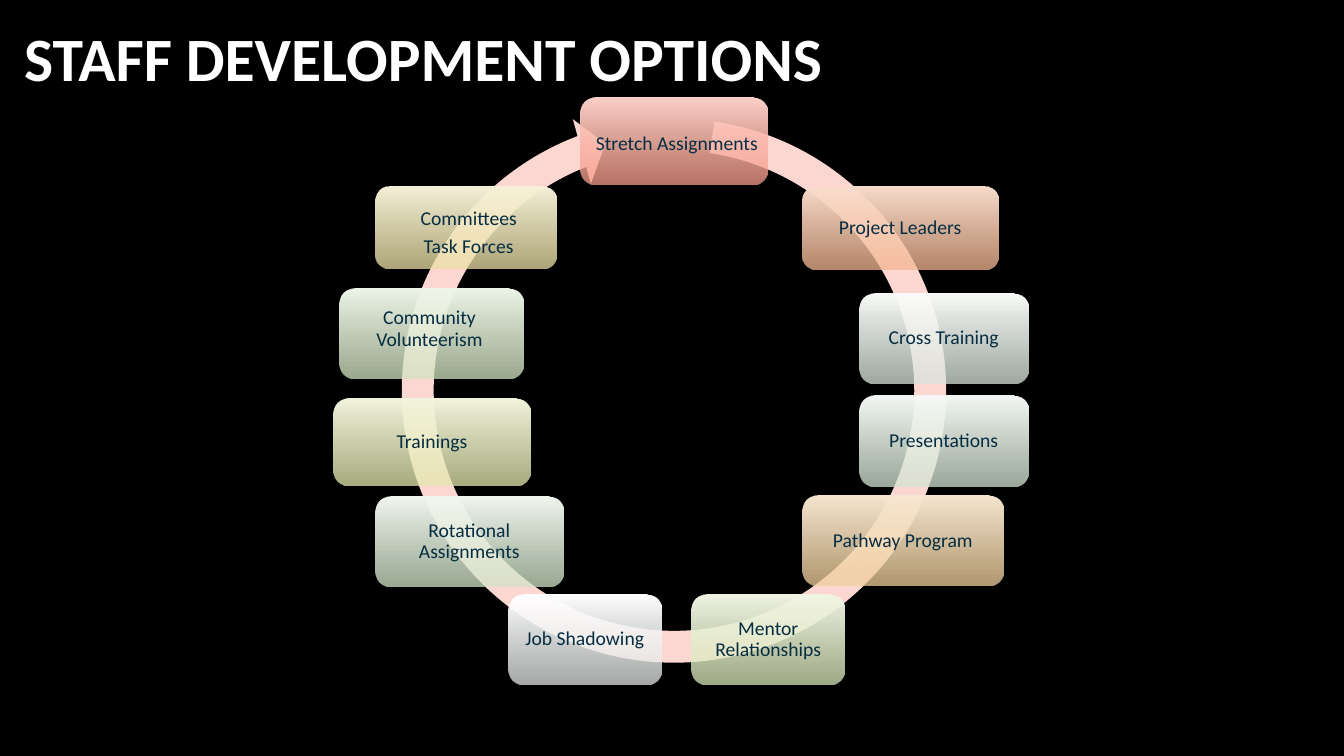
"""Build the slide of staff development options around a circular arrow."""
from dataclasses import dataclass

import lxml.etree
import pptx
import pptx.dml.color
import pptx.enum.shapes
import pptx.enum.text
import pptx.oxml.ns
import pptx.shapes.autoshape
import pptx.shapes.shapetree
import pptx.text.text
import pptx.util

PX = 9144
FONT = "Calibri"
INSET = 4
ALPHA = "74000"
BENDS = (0.055, 3.307, 149.358, 167.131, 0.058)
COLORS = {
    "back": "000000",
    "title": "FFFFFF",
    "ring": "FCD6D1",
    "text": "062D41",
}
FADES = {
    "rose": ("FCD1C9", "F89C8A"),
    "peach": ("F9DDCD", "F4B792"),
    "amber": ("F7E8D2", "EFCE9B"),
    "sand": ("F6F1D8", "EBE0A5"),
    "lime": ("F3F5DE", "E4E8AE"),
    "leaf": ("F0F5E4", "D8E6B7"),
    "moss": ("EFF6EA", "D2E4C1"),
    "sage": ("F2F7F0", "D1E4C9"),
    "mint": ("F5F9F5", "D3E4D2"),
    "mist": ("FAFCFA", "D9E4DB"),
    "snow": ("FFFFFF", "E1E5E3"),
}


@dataclass(frozen=True)
class Card:
    text: str
    left: int
    top: int
    width: int
    height: int
    fade: str
    right: int = 0
    down: int = 0


CARDS = (
    Card("Stretch Assignments", 576, 97, 185, 86, "rose", 3, 3),
    Card("Project Leaders", 796, 185, 194, 82, "peach"),
    Card("Pathway Program", 796, 492, 199, 89, "amber"),
    Card("Committees\nTask Forces", 372, 185, 180, 81, "sand", 3, 6),
    Card("Trainings", 331, 395, 195, 87, "lime"),
    Card("Mentor Relationships", 686, 590, 152, 89, "leaf"),
    Card("Community Volunteerism", 337, 286, 182, 89, "moss", -2, -4),
    Card("Rotational Assignments", 372, 493, 187, 89, "sage"),
    Card("Presentations", 852, 392, 168, 91, "mint"),
    Card("Cross Training", 852, 291, 168, 89, "mist"),
    Card("Job Shadowing", 504, 590, 152, 89, "snow"),
)


def px(size: int) -> pptx.util.Emu:
    """Turn px into EMU."""
    return pptx.util.Emu(size * PX)


def rgb(code: str) -> pptx.dml.color.RGBColor:
    """Turn a hex string into a colour."""
    return pptx.dml.color.RGBColor.from_string(code)


def style(frame: pptx.text.text.TextFrame, size: int, code: str, bold: bool) -> None:
    """Format all runs of a text frame."""
    frame.word_wrap = True
    frame.vertical_anchor = pptx.enum.text.MSO_ANCHOR.MIDDLE
    for para in frame.paragraphs:
        for run in para.runs:
            run.font.name = FONT
            run.font.size = pptx.util.Pt(size)
            run.font.bold = bold
            run.font.color.rgb = rgb(code)


def shade(shape: pptx.shapes.autoshape.Shape, pair: tuple[str, str]) -> None:
    """Fill a shape from top to bottom, with a clearer end."""
    shape.fill.gradient()
    shape.fill.gradient_angle = 270
    for stop, place, code in zip(shape.fill.gradient_stops, (0, 1), pair):
        stop.position = place
        stop.color.rgb = rgb(code)
    last = shape.element.spPr.findall(".//" + pptx.oxml.ns.qn("a:srgbClr"))[-1]
    lxml.etree.SubElement(last, pptx.oxml.ns.qn("a:alpha"), val=ALPHA)


def draw_title(shapes: pptx.shapes.shapetree.SlideShapes) -> None:
    """Write the slide title."""
    box = shapes.add_textbox(px(14), px(0), px(1082), px(112))
    box.text_frame.text = "STAFF DEVELOPMENT OPTIONS"
    style(box.text_frame, 44, COLORS["title"], True)


def draw_ring(shapes: pptx.shapes.shapetree.SlideShapes) -> None:
    """Draw the circular arrow."""
    kind = pptx.enum.shapes.MSO_SHAPE.CIRCULAR_ARROW
    ring = shapes.add_shape(kind, px(381), px(100), px(575), px(575))
    for index, bend in enumerate(BENDS):
        ring.adjustments[index] = bend
    ring.shadow.inherit = False
    ring.fill.solid()
    ring.fill.fore_color.rgb = rgb(COLORS["ring"])
    ring.line.fill.background()


def draw_card(shapes: pptx.shapes.shapetree.SlideShapes, card: Card) -> None:
    """Draw one option with its label."""
    kind = pptx.enum.shapes.MSO_SHAPE.ROUNDED_RECTANGLE
    shape = shapes.add_shape(
        kind, px(card.left), px(card.top), px(card.width), px(card.height)
    )
    shape.shadow.inherit = False
    shape.line.fill.background()
    shade(shape, FADES[card.fade])
    frame = shape.text_frame
    frame.margin_left = px(INSET + max(0, 2 * card.right))
    frame.margin_right = px(INSET + max(0, -2 * card.right))
    frame.margin_top = px(INSET + max(0, 2 * card.down))
    frame.margin_bottom = px(INSET + max(0, -2 * card.down))
    frame.text = card.text
    style(frame, 14, COLORS["text"], False)
    for para in frame.paragraphs:
        para.alignment = pptx.enum.text.PP_ALIGN.CENTER
        para.line_spacing = 0.9
        para.space_after = pptx.util.Pt(4.9)


def main() -> None:
    """Build and save the deck."""
    deck = pptx.Presentation()
    deck.slide_width = px(1333)
    deck.slide_height = px(750)
    slide = deck.slides.add_slide(deck.slide_layouts[6])
    slide.background.fill.solid()
    slide.background.fill.fore_color.rgb = rgb(COLORS["back"])
    draw_title(slide.shapes)
    draw_ring(slide.shapes)
    for card in CARDS:
        draw_card(slide.shapes, card)
    deck.save("out.pptx")


if __name__ == "__main__":
    main()
